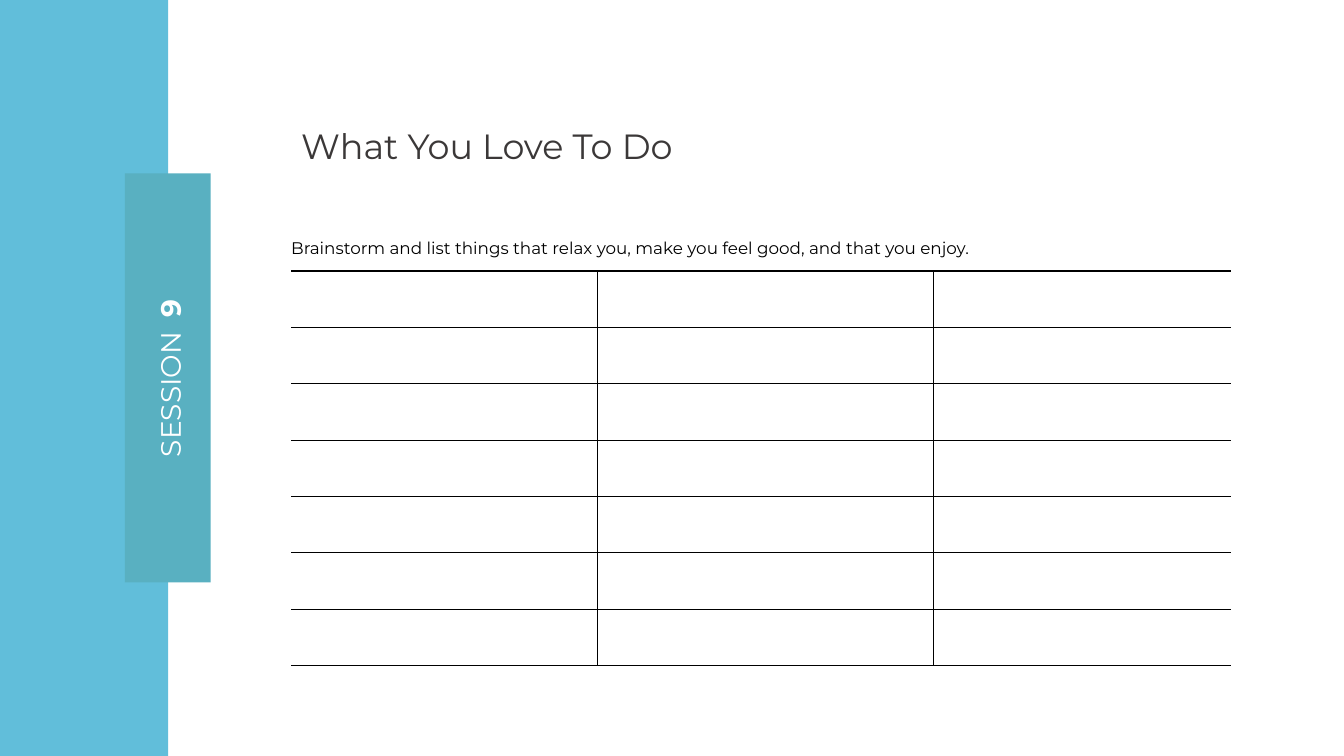
from lxml import etree
from pptx import Presentation
from pptx.dml.color import RGBColor
from pptx.enum.shapes import MSO_SHAPE
from pptx.enum.text import MSO_AUTO_SIZE, PP_ALIGN
from pptx.oxml.ns import qn
from pptx.util import Cm, Pt

RECTANGLE = MSO_SHAPE.RECTANGLE
FIT_SHAPE = MSO_AUTO_SIZE.SHAPE_TO_FIT_TEXT
CENTER = PP_ALIGN.CENTER
FONT = "Montserrat"
WHITE, BLACK, GREY = "FFFFFF", "000000", "3B3838"
BLUE, TEAL = "61BEDA", "59B0C1"
COLUMN_WIDTHS = (7.72, 8.46, 7.49)
ROW_COUNT, ROW_HEIGHT = 7, 1.42
CONTENT_LEFT = 7.34


def colour(value):
    """Turn a hex string into a colour."""
    return RGBColor.from_string(value)


def add_panel(page, left, top, width, height, fill):
    """Add a plain filled rectangle."""
    panel = page.shapes.add_shape(RECTANGLE, Cm(left), Cm(top), Cm(width), Cm(height))
    panel.shadow.inherit = False
    panel.fill.solid()
    panel.fill.fore_color.rgb = colour(fill)
    panel.line.fill.background()


def add_text(page, left, top, width, height, wrap=True):
    """Add an empty text box and return it with its paragraph."""
    box = page.shapes.add_textbox(Cm(left), Cm(top), Cm(width), Cm(height))
    box.text_frame.word_wrap = wrap
    return box, box.text_frame.paragraphs[0]


def add_span(para, text, size, ink, bold=False):
    """Add one formatted run to a paragraph."""
    span = para.add_run()
    span.text = text
    span.font.name = FONT
    span.font.size = Pt(size)
    span.font.bold = bold
    span.font.color.rgb = colour(ink)


def set_borders(cell, sides):
    """Draw one-point lines on the named sides and clear the others."""
    properties = cell._tc.get_or_add_tcPr()
    for position, side in enumerate("LRTB"):
        line = etree.Element(qn("a:ln" + side), w=str(Pt(1)))
        if side in sides:
            fill = etree.SubElement(line, qn("a:solidFill"))
            etree.SubElement(fill, qn("a:srgbClr"), val=BLACK)
        else:
            etree.SubElement(line, qn("a:noFill"))
        properties.insert(position, line)


def add_session_label(page):
    """Add the upright session label on the teal panel."""
    box, para = add_text(page, 2.03, 8.97, 4.52, 1.12, wrap=False)
    box.rotation = 270
    box.text_frame.auto_size = FIT_SHAPE
    para.alignment = CENTER
    add_span(para, "SESSION  ", 20, WHITE)
    add_span(para, "9", 20, WHITE, bold=True)


def add_title(page):
    """Add the slide title."""
    box, para = add_text(page, CONTENT_LEFT, 3.02, 10.82, 1.32)
    box.text_frame.auto_size = FIT_SHAPE
    add_span(para, "What You Love To Do", 25, GREY)


def add_instruction(page):
    """Add the instruction above the table."""
    box, para = add_text(page, CONTENT_LEFT, 6.12, 17.42, 8.18)
    frame = box.text_frame
    frame.margin_left = frame.margin_right = frame.margin_top = frame.margin_bottom = 0
    para.line_spacing = Pt(10.8)
    add_span(para, "Brainstorm and list things that relax you, make you feel good, "
                   "and that you enjoy.", 12, BLACK)


def add_answer_table(page):
    """Add the empty table with open left and right edges."""
    frame = page.shapes.add_table(
        ROW_COUNT, len(COLUMN_WIDTHS), Cm(CONTENT_LEFT), Cm(6.83),
        Cm(sum(COLUMN_WIDTHS)), Cm(ROW_COUNT * ROW_HEIGHT))
    table = frame.table
    table.first_row = table.horz_banding = False
    for column, width in zip(table.columns, COLUMN_WIDTHS):
        column.width = Cm(width)
    for row in table.rows:
        row.height = Cm(ROW_HEIGHT)
        for cell, sides in zip(row.cells, ("RTB", "LRTB", "LTB")):
            cell.fill.background()
            set_borders(cell, sides)


def main():
    """Build the slide and save the deck."""
    deck = Presentation()
    deck.slide_width, deck.slide_height = Cm(33.87), Cm(19.05)
    page = deck.slides.add_slide(deck.slide_layouts[6])
    add_panel(page, 0, 0, 4.24, 19.05, BLUE)
    add_panel(page, 3.15, 4.37, 2.16, 10.31, TEAL)
    add_session_label(page)
    add_title(page)
    add_instruction(page)
    add_answer_table(page)
    deck.save("out.pptx")


if __name__ == "__main__":
    main()
